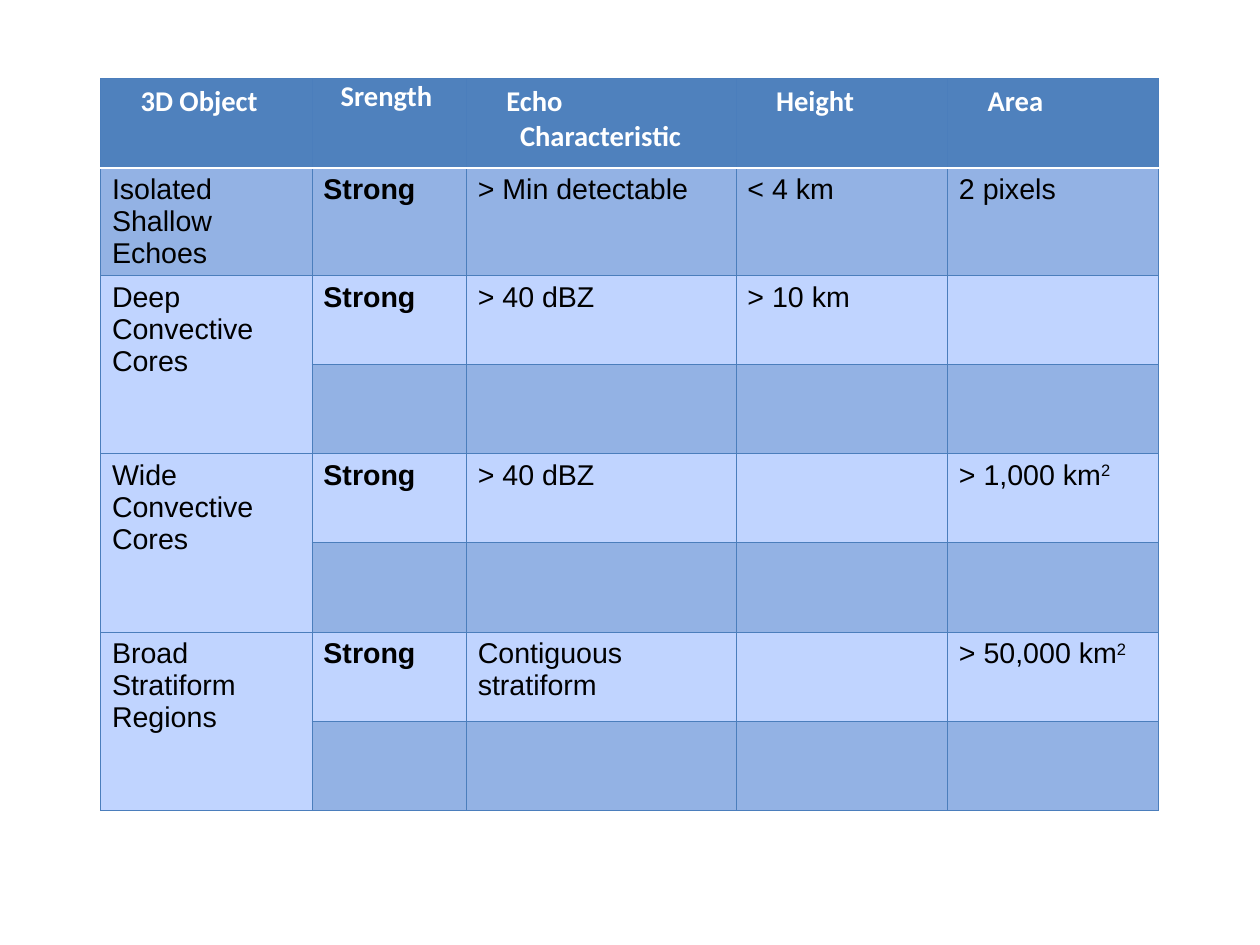
from lxml import etree
from pptx import Presentation
from pptx.dml.color import RGBColor
from pptx.oxml.ns import qn
from pptx.util import Inches, Pt

CM_PER_INCH = 2.54
COLORS = {
    "header": "4F81BD",
    "dark": "93B2E4",
    "light": "C0D4FF",
    "line": "4B7EBC",
    "white": "FFFFFF",
    "black": "000000",
}
COL_WIDTHS = [1.85, 1.35, 2.36, 1.85, 1.85]
ROW_HEIGHT = 0.78
HEADINGS = ["3D Object", "Srength", "Echo Characteristic", "Height", "Area"]
# "^" starts a superscript, "\v" breaks a line
BODY = [
    ["Isolated Shallow Echoes", "Strong", "> Min detectable", "< 4 km", "2 pixels"],
    ["Deep Convective Cores", "Strong", "> 40 dBZ", "> 10 km", ""],
    [""] * 5,
    ["Wide Convective Cores", "Strong", "> 40 dBZ", "", "> 1,000 km^2"],
    [""] * 5,
    ["Broad Stratiform Regions", "Strong", "Contiguous\vstratiform", "", "> 50,000 km^2"],
    [""] * 5,
]
MERGED_ROWS = (2, 4, 6)


def rgb(name):
    return RGBColor.from_string(COLORS[name])


def set_borders(cell, top, bottom):
    """Draw all four edges; top and bottom are (colour, points)."""
    thin = ("line", 0.75)
    edges = {"a:lnL": thin, "a:lnR": thin, "a:lnT": top, "a:lnB": bottom}
    tcPr = cell._tc.get_or_add_tcPr()
    for i, (tag, (color, width)) in enumerate(edges.items()):
        ln = etree.Element(qn(tag), w=str(Pt(width)))
        fill = etree.SubElement(ln, qn("a:solidFill"))
        etree.SubElement(fill, qn("a:srgbClr"), val=COLORS[color])
        tcPr.insert(i, ln)


def write_cell(cell, text, font, color, bold):
    base, _, superscript = text.partition("^")
    p = cell.text_frame.paragraphs[0]
    p.text = base
    if superscript:
        r = p.add_run()
        r.text = superscript
        r._r.get_or_add_rPr().set("baseline", "30000")
    p.font.name = font
    p.font.size = Pt(18)
    p.font.bold = bold
    p.font.color.rgb = rgb(color)
    return p


def fill_cell(cell, color):
    cell.fill.solid()
    cell.fill.fore_color.rgb = rgb(color)


def add_header(table):
    for col, heading in enumerate(HEADINGS):
        cell = table.cell(0, col)
        p = write_cell(cell, heading, "Calibri", "white", True)
        pPr = p._p.get_or_add_pPr()
        pPr.set("marL", str(Inches(0.37)))
        pPr.set("indent", str(Inches(-0.12)))
        fill_cell(cell, "header")
        set_borders(cell, ("line", 0.75), ("white", 2))
    strength = table.cell(0, 1)
    strength.margin_left = strength.margin_right = 0
    strength.margin_top = strength.margin_bottom = 0


def add_body(table):
    for row, texts in enumerate(BODY, start=1):
        top = ("white", 2) if row == 1 else ("line", 0.75)
        for col, text in enumerate(texts):
            cell = table.cell(row, col)
            write_cell(cell, text, "Arial", "black", col == 1)
            fill_cell(cell, "dark" if row % 2 else "light")
            set_borders(cell, top, ("line", 0.75))
    for row in MERGED_ROWS:
        table.cell(row, 0).merge(table.cell(row + 1, 0))


def add_echo_table(s):
    rows = len(BODY) + 1
    frame = s.shapes.add_table(
        rows, len(COL_WIDTHS), Inches(0.88), Inches(0.69),
        Inches(sum(COL_WIDTHS)), Inches(rows * ROW_HEIGHT))
    table = frame.table
    table.horz_banding = False
    for column, width in zip(table.columns, COL_WIDTHS):
        column.width = Inches(width)
    for row in table.rows:
        row.height = Inches(ROW_HEIGHT)
    add_header(table)
    add_body(table)


def main():
    prs = Presentation()
    prs.slide_width = Inches(28 / CM_PER_INCH)
    prs.slide_height = Inches(21 / CM_PER_INCH)
    s = prs.slides.add_slide(prs.slide_layouts[6])
    add_echo_table(s)
    prs.save("out.pptx")


if __name__ == "__main__":
    main()
